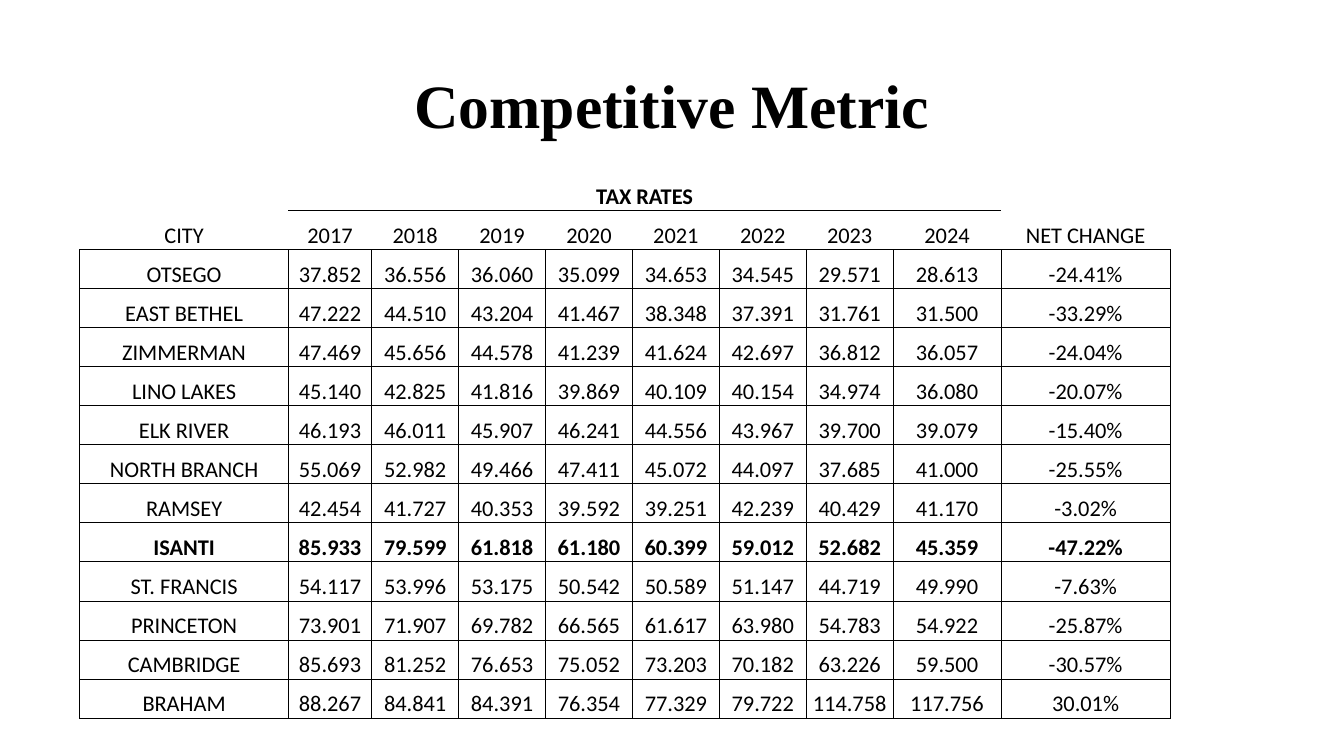
from lxml import etree
from pptx import Presentation
from pptx import util as u
from pptx.dml.color import RGBColor
from pptx.enum import text
from pptx.oxml import ns

BLACK = RGBColor(0, 0, 0)

COLUMN_WIDTHS = [149] + [59.5] + [62.1] * 6 + [77] + [121]
ROW_HEIGHTS = [36.5] + [27.92] * 13
HEADINGS = ["CITY", *map(str, range(2017, 2025)), "NET CHANGE"]
HIGHLIGHT = "ISANTI"
TAX_RATES = [
    ("OTSEGO", "37.852 36.556 36.060 35.099 34.653 34.545 29.571 28.613", "-24.41%"),
    ("EAST BETHEL", "47.222 44.510 43.204 41.467 38.348 37.391 31.761 31.500", "-33.29%"),
    ("ZIMMERMAN", "47.469 45.656 44.578 41.239 41.624 42.697 36.812 36.057", "-24.04%"),
    ("LINO LAKES", "45.140 42.825 41.816 39.869 40.109 40.154 34.974 36.080", "-20.07%"),
    ("ELK RIVER", "46.193 46.011 45.907 46.241 44.556 43.967 39.700 39.079", "-15.40%"),
    ("NORTH BRANCH", "55.069 52.982 49.466 47.411 45.072 44.097 37.685 41.000", "-25.55%"),
    ("RAMSEY", "42.454 41.727 40.353 39.592 39.251 42.239 40.429 41.170", "-3.02%"),
    ("ISANTI", "85.933 79.599 61.818 61.180 60.399 59.012 52.682 45.359", "-47.22%"),
    ("ST. FRANCIS", "54.117 53.996 53.175 50.542 50.589 51.147 44.719 49.990", "-7.63%"),
    ("PRINCETON", "73.901 71.907 69.782 66.565 61.617 63.980 54.783 54.922", "-25.87%"),
    ("CAMBRIDGE", "85.693 81.252 76.653 75.052 73.203 70.182 63.226 59.500", "-30.57%"),
    ("BRAHAM", "88.267 84.841 84.391 76.354 77.329 79.722 114.758 117.756", "30.01%"),
]


class SlideBuilder:
    """Holds the slide and its style."""
    title_font, title_size = "Times New Roman", 44
    table_font, table_size = "Calibri", 16
    color = BLACK

    def __init__(self, slide):
        self.slide = slide

    def add_run(self, p, words, font, size, bold):
        p.alignment = text.PP_ALIGN.CENTER
        r = p.add_run()
        r.text = words
        r.font.name, r.font.size, r.font.bold = font, u.Pt(size), bold
        r.font.color.rgb = self.color

    def title(self, words, left, top, width, height):
        sp = self.slide.shapes.add_textbox(*map(u.Pt, (left, top, width, height)))
        tf = sp.text_frame
        tf.word_wrap = True
        tf.vertical_anchor = text.MSO_ANCHOR.BOTTOM
        p = tf.paragraphs[0]
        p.line_spacing = 0.9
        self.add_run(p, words, self.title_font, self.title_size, True)

    def table(self, left, top, widths, heights):
        frame = self.slide.shapes.add_table(
            len(heights), len(widths),
            *map(u.Pt, (left, top, sum(widths), sum(heights))))
        table = frame.table
        table.first_row = table.horz_banding = False
        for column, width in zip(table.columns, widths):
            column.width = u.Pt(width)
        for row, height in zip(table.rows, heights):
            row.height = u.Pt(height)
        return table

    def borders(self, cell, **weights):
        """Draw the sides L, R, T and B given in points; clear the others."""
        tc_pr = cell._tc.get_or_add_tcPr()
        for side in "LRTB":
            weight = weights.get(side, 0)
            line = etree.SubElement(tc_pr, ns.qn(f"a:ln{side}"), w=str(u.Pt(weight)))
            if weight:
                fill = etree.SubElement(line, ns.qn("a:solidFill"))
                etree.SubElement(fill, ns.qn("a:srgbClr"), val=str(self.color))
            else:
                etree.SubElement(line, ns.qn("a:noFill"))
        cell.fill.background()

    def cell_text(self, cell, words, bold=False):
        cell.vertical_anchor = text.MSO_ANCHOR.BOTTOM
        cell.margin_left = cell.margin_right = cell.margin_top = u.Pt(0.7)
        cell.margin_bottom = 0
        self.add_run(cell.text_frame.paragraphs[0], words,
                     self.table_font, self.table_size, bold)


def main():
    prs = Presentation()
    prs.slide_width, prs.slide_height = u.Pt(960), u.Pt(540)
    s = SlideBuilder(prs.slides.add_slide(prs.slide_layouts[6]))

    # Title
    s.title("Competitive Metric", 120, 24, 720, 81)

    # Group heading over the year columns
    table = s.table(57, 113.75, COLUMN_WIDTHS, ROW_HEIGHTS)
    last = len(HEADINGS) - 1
    for col in range(last + 1):
        s.borders(table.cell(0, col), B=1 if 0 < col < last else 0)
    table.cell(0, 1).merge(table.cell(0, last - 1))
    s.cell_text(table.cell(0, 1), "TAX RATES", bold=True)

    # Column headings
    for col, heading in enumerate(HEADINGS):
        cell = table.cell(1, col)
        s.borders(cell, T=1 if 0 < col < last else 0, B=0.5)
        s.cell_text(cell, heading)

    # Cities
    for row, (city, rates, change) in enumerate(TAX_RATES, start=2):
        for col, words in enumerate([city, *rates.split(), change]):
            cell = table.cell(row, col)
            s.borders(cell, L=0.5, R=0.5, T=0.5, B=0.5)
            s.cell_text(cell, words, bold=city == HIGHLIGHT)

    prs.save("out.pptx")


if __name__ == "__main__":
    main()
